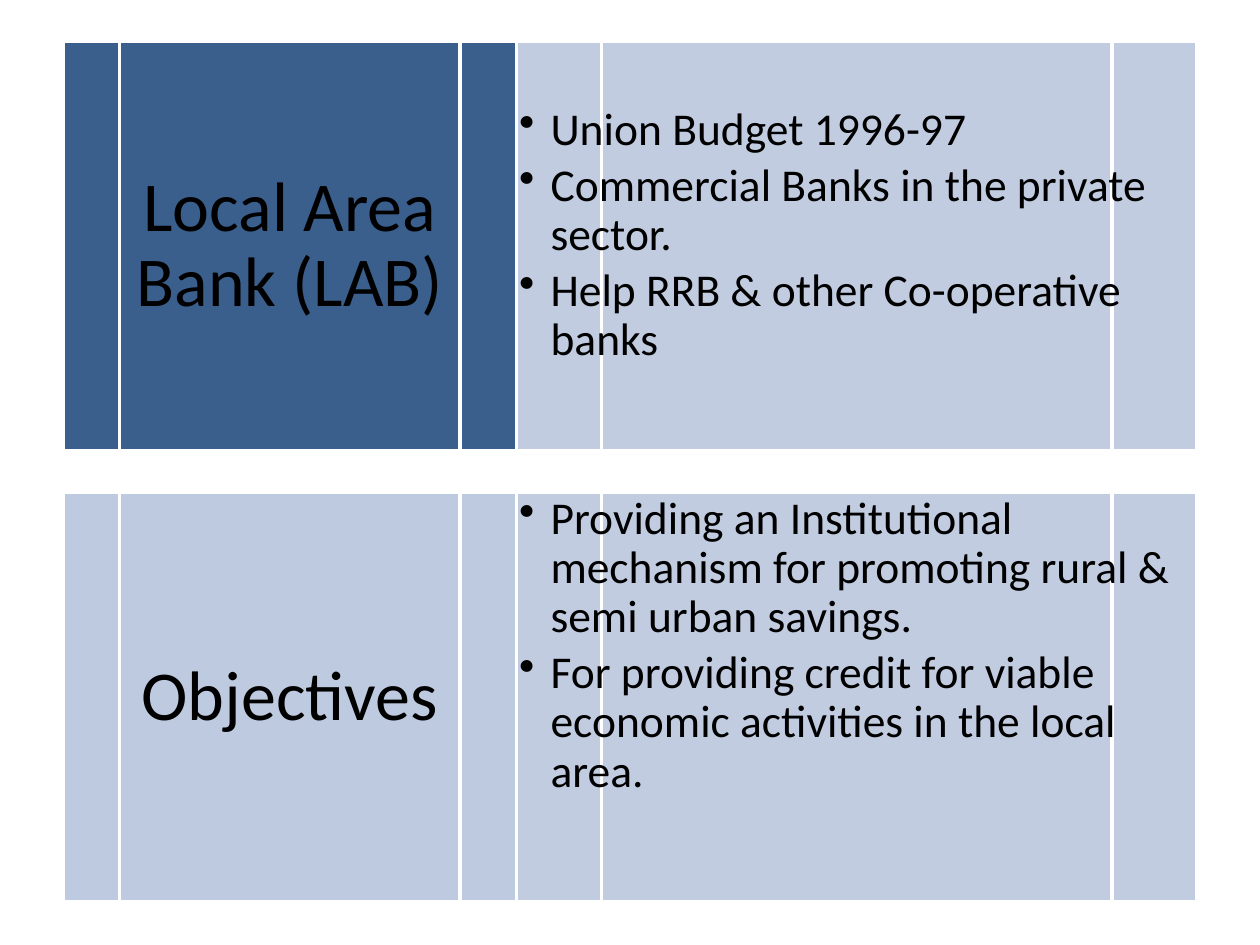
from lxml.etree import SubElement
from pptx import Presentation
from pptx.dml.color import RGBColor
from pptx.enum.shapes import MSO_SHAPE
from pptx.enum.text import MSO_ANCHOR, PP_ALIGN
from pptx.oxml.ns import qn
from pptx.util import Inches, Pt

LEFT, SPLIT, RIGHT = 0.5, 4.1, 9.5
TOP, HIGH, PITCH = 0.33, 3.25, 3.58
ROWS = [
    ("Local Area Bank (LAB)", "3A5F8C", 0.51, [
        "Union Budget 1996-97",
        "Commercial Banks in the private sector.",
        "Help RRB & other Co-operative banks",
    ]),
    ("Objectives", "BECADF", 0.02, [
        "Providing an Institutional mechanism for promoting rural & semi urban savings.",
        "For providing credit for viable economic activities in the local area.",
    ]),
]


def paint(part, color):
    """Give a fill or font a solid hex colour."""
    part.solid()
    part.fore_color.rgb = RGBColor.from_string(color)


def add_panel(slide, box, color, alpha=100):
    """Draw a barred panel with a white outline."""
    panel = slide.shapes.add_shape(MSO_SHAPE.FLOWCHART_PREDEFINED_PROCESS, *box)
    panel.shadow.inherit = False
    paint(panel.fill, color)
    if alpha < 100:
        tone = panel.fill._xPr.find(".//" + qn("a:srgbClr"))
        SubElement(tone, qn("a:alpha"), val=str(alpha * 1000))
    paint(panel.line.fill, "FFFFFF")
    panel.line.width = Pt(2)


def add_bullet(para):
    """Set a hanging round bullet on a paragraph."""
    props = para._p.get_or_add_pPr()
    props.set("marL", str(Inches(0.25)))
    props.set("indent", str(-Inches(0.25)))
    SubElement(props, qn("a:buChar"), char="•")


def add_text(slide, box, lines, size, pads, align=PP_ALIGN.LEFT,
             anchor=MSO_ANCHOR.TOP, after=0, bullet=False):
    """Write lines of text in a box with the given format."""
    frame = slide.shapes.add_textbox(*box).text_frame
    frame.word_wrap = True
    frame.vertical_anchor = anchor
    side, top, base = map(Inches, pads)
    frame.margin_left = frame.margin_right = side
    frame.margin_top, frame.margin_bottom = top, base
    for i, line in enumerate(lines):
        para = frame.add_paragraph() if i else frame.paragraphs[0]
        para.alignment = align
        para.line_spacing = 0.9
        para.space_after = Pt(after)
        if bullet:
            add_bullet(para)
        run = para.add_run()
        run.text = line
        run.font.name = "Calibri"
        run.font.size = Pt(size)
        paint(run.font.fill, "000000")


def add_row(slide, index, title, color, inset, points):
    """Place one row: a title panel beside its list of points."""
    top = TOP + index * PITCH
    head = [Inches(n) for n in (LEFT, top, SPLIT - LEFT, HIGH)]
    body = [Inches(n) for n in (SPLIT, top, RIGHT - SPLIT, HIGH)]
    add_panel(slide, body, "BBC7DE", alpha=90)
    add_text(slide, body, points, 26, (0.02, inset, 0.02), after=4, bullet=True)
    add_panel(slide, head, color)
    add_text(slide, head, [title], 40, (0.17, 0.08, 0.08),
             align=PP_ALIGN.CENTER, anchor=MSO_ANCHOR.MIDDLE)


def main():
    """Build the slide and save it."""
    deck = Presentation()
    deck.slide_width, deck.slide_height = Inches(10), Inches(7.5)
    slide = deck.slides.add_slide(deck.slide_layouts[6])
    for index, row in enumerate(ROWS):
        add_row(slide, index, *row)
    deck.save("out.pptx")


if __name__ == "__main__":
    main()
